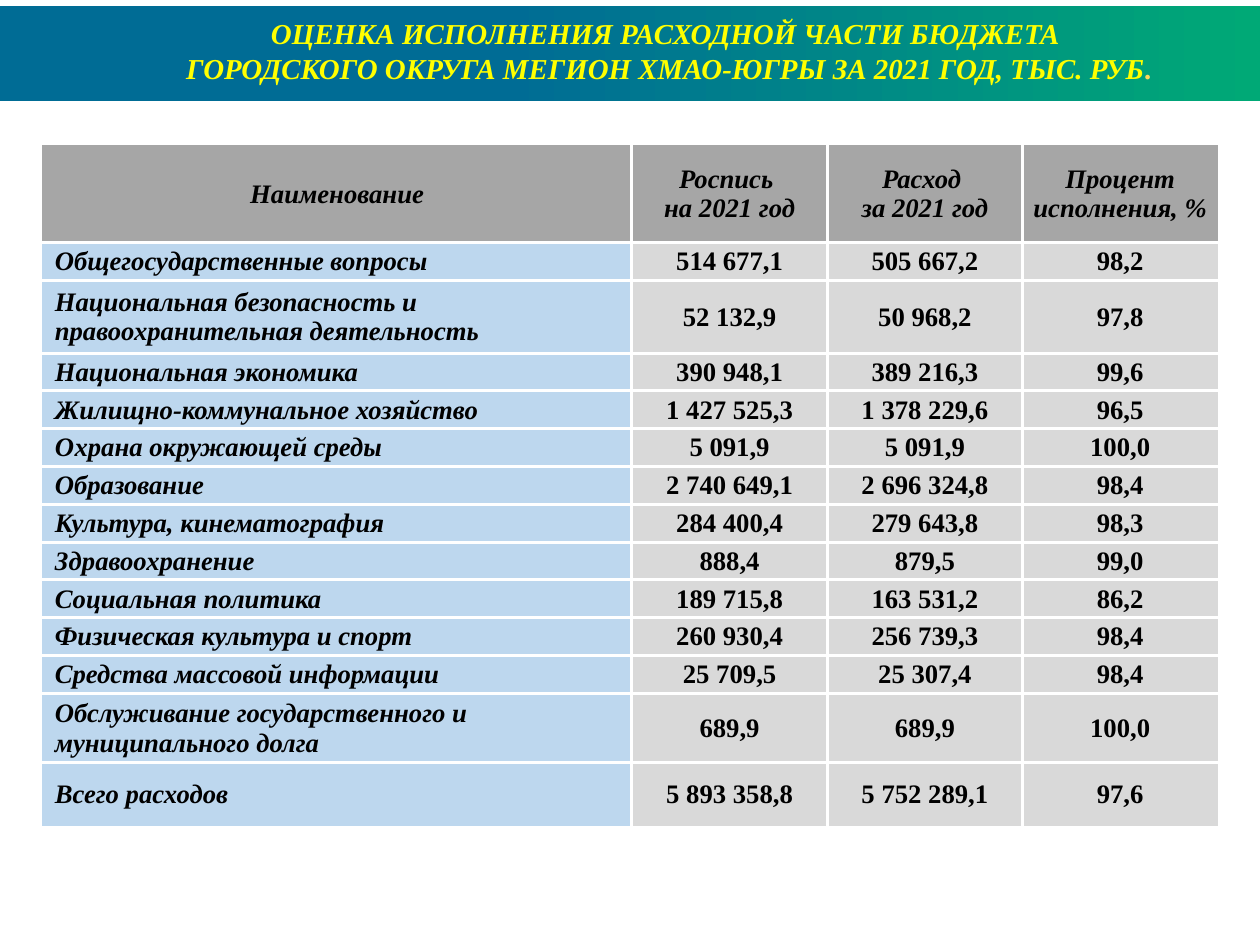
"""Build the slide on execution of the 2021 city budget expenditure."""
from lxml import etree
from pptx import Presentation
from pptx.dml.color import RGBColor
from pptx.enum.shapes import MSO_SHAPE
from pptx.enum.text import MSO_ANCHOR, PP_ALIGN
from pptx.oxml.ns import qn
from pptx.util import Cm, Pt

RECTANGLE = MSO_SHAPE.RECTANGLE
MIDDLE = MSO_ANCHOR.MIDDLE
LEFT, CENTER = PP_ALIGN.LEFT, PP_ALIGN.CENTER

TITLE_LINES = [
    "ОЦЕНКА ИСПОЛНЕНИЯ РАСХОДНОЙ ЧАСТИ БЮДЖЕТА ",
    "ГОРОДСКОГО ОКРУГА МЕГИОН ХМАО-ЮГРЫ ЗА 2021 ГОД, ТЫС. РУБ",
]
TITLE_END = "."
HEADERS = [
    ["Наименование"],
    ["Роспись ", "на 2021 год"],
    ["Расход ", "за 2021 год"],
    ["Процент исполнения, %"],
]
EXPENDITURES = [
    ("Общегосударственные вопросы", "514 677,1", "505 667,2", "98,2"),
    ("Национальная безопасность и правоохранительная деятельность",
     "52 132,9", "50 968,2", "97,8"),
    ("Национальная экономика", "390 948,1", "389 216,3", "99,6"),
    ("Жилищно-коммунальное хозяйство", "1 427 525,3", "1 378 229,6", "96,5"),
    ("Охрана окружающей среды", "5 091,9", "5 091,9", "100,0"),
    ("Образование", "2 740 649,1", "2 696 324,8", "98,4"),
    ("Культура, кинематография", "284 400,4", "279 643,8", "98,3"),
    ("Здравоохранение", "888,4", "879,5", "99,0"),
    ("Социальная политика", "189 715,8", "163 531,2", "86,2"),
    ("Физическая культура и спорт", "260 930,4", "256 739,3", "98,4"),
    ("Средства массовой информации", "25 709,5", "25 307,4", "98,4"),
    ("Обслуживание государственного и муниципального долга",
     "689,9", "689,9", "100,0"),
    ("Всего расходов", "5 893 358,8", "5 752 289,1", "97,6"),
]

COLUMN_WIDTHS = [18.72, 6.2, 6.2, 6.2]
ROW_HEIGHTS = [3.1, 1.2, 2.31] + [1.2] * 9 + [2.21, 2]

FONT = "Times New Roman"
BLACK = RGBColor(0x00, 0x00, 0x00)
YELLOW = RGBColor(0xFF, 0xFF, 0x00)
PALE_YELLOW = RGBColor(0xFF, 0xD8, 0x5B)
BLUE = RGBColor(0x00, 0x6C, 0x95)
GREEN = RGBColor(0x00, 0xA9, 0x76)
HEADER_GRAY = RGBColor(0xA6, 0xA6, 0xA6)
NAME_BLUE = RGBColor(0xBD, 0xD7, 0xEE)
VALUE_GRAY = RGBColor(0xD9, 0xD9, 0xD9)
WHITE = RGBColor(0xFF, 0xFF, 0xFF)


def add_run(paragraph, text, size, color, italic=True):
    """Add one bold run to the paragraph."""
    run = paragraph.add_run()
    run.text = text
    font = run.font
    font.name, font.size, font.bold, font.italic = FONT, Pt(size), True, italic
    font.color.rgb = color


def add_lines(paragraph, lines, size, color, italic=True):
    """Add lines of text parted by line breaks."""
    for index, line in enumerate(lines):
        if index:
            paragraph.add_line_break()
        add_run(paragraph, line, size, color, italic)


def set_borders(cell, visible_sides):
    """Draw white lines on the given sides and none on the others."""
    properties = cell._tc.get_or_add_tcPr()
    for side in "LRTB":
        line = etree.SubElement(properties, qn(f"a:ln{side}"), w=str(Pt(3)))
        if side in visible_sides:
            fill = etree.SubElement(line, qn("a:solidFill"))
            etree.SubElement(fill, qn("a:srgbClr"), val=str(WHITE))
        else:
            etree.SubElement(line, qn("a:noFill"))


def add_banner(slide, width):
    """Add the gradient band and the title on it."""
    band = slide.shapes.add_shape(RECTANGLE, 0, Cm(0.2), width, Cm(3))
    band.shadow.inherit = False
    band.line.fill.background()
    band.fill.gradient()
    band.fill.gradient_angle = 0
    stops = [(0.4, BLUE), (1, GREEN)]
    for stop, (position, color) in zip(band.fill.gradient_stops, stops):
        stop.position = position
        stop.color.rgb = color

    title = slide.shapes.add_textbox(Cm(2.5), Cm(0.38), Cm(37.5), Cm(2.5))
    title.text_frame.word_wrap = True
    paragraph = title.text_frame.paragraphs[0]
    paragraph.alignment = CENTER
    add_lines(paragraph, TITLE_LINES, 26, YELLOW)
    add_run(paragraph, TITLE_END, 26, PALE_YELLOW)


def add_budget_table(slide):
    """Add the table of planned and actual expenditure."""
    rows = [HEADERS] + [[[text] for text in row] for row in EXPENDITURES]
    last_row, last_column = len(rows) - 1, len(HEADERS) - 1
    table = slide.shapes.add_table(
        len(rows), len(HEADERS), Cm(1.34), Cm(4.6),
        Cm(sum(COLUMN_WIDTHS)), Cm(sum(ROW_HEIGHTS))).table
    table.first_row = table.horz_banding = False
    for column, width in zip(table.columns, COLUMN_WIDTHS):
        column.width = Cm(width)
    for row, height in zip(table.rows, ROW_HEIGHTS):
        row.height = Cm(height)

    for row_index, row in enumerate(rows):
        for column_index, lines in enumerate(row):
            is_header = row_index == 0
            is_name = column_index == 0 and not is_header
            cell = table.cell(row_index, column_index)
            inner = {"L": column_index > 0, "R": column_index < last_column,
                     "T": row_index > 0, "B": row_index < last_row}
            set_borders(cell, [side for side in inner if inner[side]])
            cell.fill.solid()
            cell.fill.fore_color.rgb = (
                HEADER_GRAY if is_header else NAME_BLUE if is_name else VALUE_GRAY)
            cell.vertical_anchor = MIDDLE
            cell.margin_left = Cm(0.4 if is_name else 0.02)
            cell.margin_right = cell.margin_top = Cm(0.02)
            cell.margin_bottom = 0
            paragraph = cell.text_frame.paragraphs[0]
            paragraph.alignment = LEFT if is_name else CENTER
            add_lines(paragraph, lines, 24, BLACK, is_header or is_name)


def main():
    """Create and save the presentation."""
    presentation = Presentation()
    presentation.slide_width, presentation.slide_height = Cm(40), Cm(30)
    slide = presentation.slides.add_slide(presentation.slide_layouts[6])
    add_banner(slide, presentation.slide_width)
    add_budget_table(slide)
    presentation.save("out.pptx")


if __name__ == "__main__":
    main()
